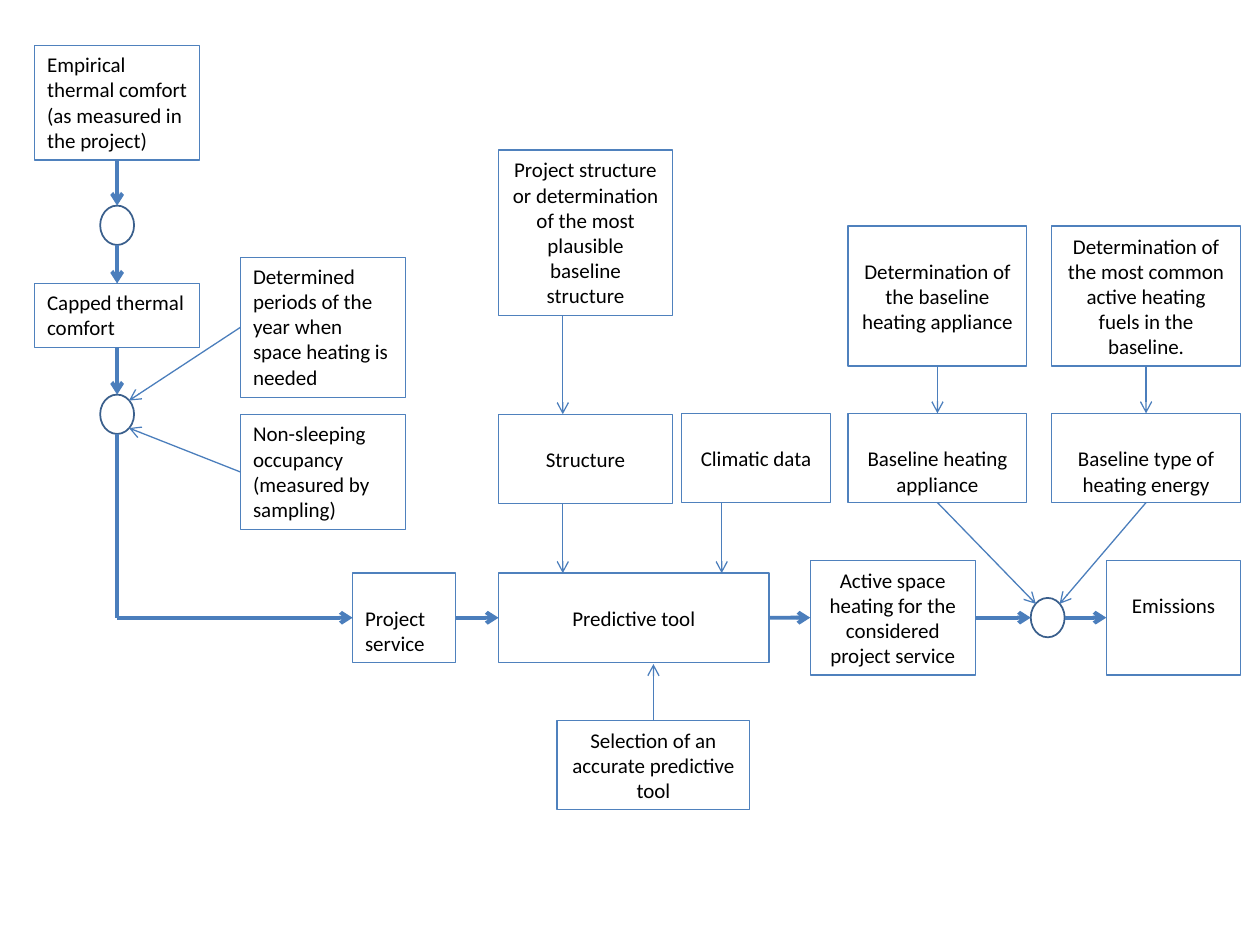
from pptx import Presentation
from pptx.enum import shapes, text
from pptx.dml.color import RGBColor
from pptx.oxml import ns
from pptx.util import Pt
from lxml import etree

COLORS = {"box": "4F81BD", "arrow": "4B7EBC", "node": "3A5F8C", "text": "000000"}
FONT, FONT_SIZE = "Calibri", 12
THIN, THICK = 0.75, 2.25
NODE_SIZE = (19.4, 22.5)

# Points on a shape, as fractions of its width and height
TOP, BOTTOM, LEFT, RIGHT = (0.5, 0), (0.5, 1), (0, 0.5), (1, 0.5)
TOP_LEFT, TOP_RIGHT, BOTTOM_RIGHT = (0.15, 0.15), (0.85, 0.15), (0.85, 0.85)

MIDDLE, BASE, UPPER = (text.MSO_ANCHOR.MIDDLE, text.MSO_ANCHOR.BOTTOM,
                       text.MSO_ANCHOR.TOP)


def color(name):
    return RGBColor.from_string(COLORS[name])


def add_outline(slide, kind, bounds, line_color, weight):
    shape = slide.shapes.add_shape(kind, *[Pt(value) for value in bounds])
    shape.shadow.inherit = False
    shape.fill.background()
    shape.line.color.rgb = color(line_color)
    shape.line.width = Pt(weight)
    return shape


def add_box(slide, bounds, label, anchor=MIDDLE, centered=True):
    shape = add_outline(slide, shapes.MSO_SHAPE.RECTANGLE, bounds, "box", THIN)
    frame = shape.text_frame
    frame.text = label
    frame.word_wrap = True
    frame.vertical_anchor = anchor
    paragraph = frame.paragraphs[0]
    paragraph.alignment = text.PP_ALIGN.CENTER if centered else text.PP_ALIGN.LEFT
    font = paragraph.runs[0].font
    font.name, font.size = FONT, Pt(FONT_SIZE)
    font.color.rgb = color("text")
    return shape


def add_node(slide, center_x, top):
    width, height = NODE_SIZE
    bounds = (center_x - width / 2, top, width, height)
    return add_outline(slide, shapes.MSO_SHAPE.OVAL, bounds, "node", 1)


def point(shape, place):
    """Position of a fractional place on a shape, in points."""
    return (shape.left.pt + place[0] * shape.width.pt,
            shape.top.pt + place[1] * shape.height.pt)


def add_line(slide, start, end, weight=THIN, head=True):
    connector = slide.shapes.add_connector(
        shapes.MSO_CONNECTOR.STRAIGHT, *[Pt(value) for value in (*start, *end)])
    connector.line.color.rgb = color("arrow")
    connector.line.width = Pt(weight)
    if head:
        etree.SubElement(connector.line._get_or_add_ln(), ns.qn("a:tailEnd"),
                         type="arrow")
    etree.SubElement(connector._element.spPr, ns.qn("a:effectLst"))


def join(slide, source, start, target, end, weight=THIN):
    add_line(slide, point(source, start), point(target, end), weight)


def drop(slide, upper, lower, x):
    """Vertical arrow between two stacked shapes."""
    add_line(slide, (x, point(upper, BOTTOM)[1]), (x, point(lower, TOP)[1]))


def comfort_region(slide, left, top, width, height):
    """Comfort chain, its two inputs and the line down to the service row."""
    box_width = 94.3
    axis = left + box_width / 2
    chain = [
        add_box(slide, (left, top, box_width, 65.5),
                "Empirical thermal comfort (as measured in the project)", UPPER, False),
        add_node(slide, axis, top + 91.5),
        add_box(slide, (left, top + 136, box_width, 36.5),
                "Capped thermal comfort", UPPER, False),
        add_node(slide, axis, top + 199.5),
    ]
    for source, target in zip(chain, chain[1:]):
        join(slide, source, BOTTOM, target, TOP, THICK)

    # Inputs to the second node
    input_left = left + width - box_width
    periods = add_box(slide, (input_left, top + 121, box_width, 80),
                      "Determined periods of the year when space heating is needed",
                      UPPER, False)
    occupancy = add_box(slide, (input_left, top + 211, box_width, 65.5),
                        "Non-sleeping occupancy (measured by sampling)", UPPER, False)
    join(slide, periods, LEFT, chain[-1], TOP_RIGHT)
    join(slide, occupancy, LEFT, chain[-1], BOTTOM_RIGHT)

    corner = (axis, top + height)
    add_line(slide, point(chain[-1], BOTTOM), corner, THICK, head=False)
    return corner


def predictive_region(slide, left, top, width, height):
    """Project service, the predictive tool and what feeds it."""
    box_height = 51
    tool_left, tool_top = left + 83.4, top + 241.8
    input_top = top + 151
    service = add_box(slide, (left, tool_top, 59, box_height),
                      "Project service", BASE, False)
    tool = add_box(slide, (tool_left, tool_top, 154.6, box_height), "Predictive tool")
    join(slide, service, RIGHT, tool, LEFT, THICK)

    # Structure and climate inputs from above
    plausible = add_box(
        slide, (tool_left, top, 99.4, 94.5),
        "Project structure or determination of the most plausible baseline structure")
    structure = add_box(slide, (tool_left, input_top, 99.4, box_height), "Structure")
    climate = add_box(slide, (left + width - 85, input_top - 0.5, 85, box_height),
                      "Climatic data")
    drop(slide, plausible, structure, tool_left + 36.7)
    drop(slide, structure, tool, tool_left + 36.7)
    drop(slide, climate, tool, tool_left + 127.5)

    # Tool selection from below
    selection = add_box(
        slide, (left + 116.8, top + height - box_height, 110.2, box_height),
        "Selection of an accurate predictive tool")
    start = point(selection, TOP)
    add_line(slide, start, (start[0], point(tool, BOTTOM)[1] + 1))
    return service, tool


def emissions_region(slide, left, top, width, height):
    """Baseline inputs over the heating-to-emissions row."""
    row_height = 65.5
    row_top = top + height - row_height
    heating = add_box(slide, (left, row_top, 94.3, row_height),
                      "Active space heating for the considered project service")
    node = add_node(slide, left + 135.7, row_top + (row_height - NODE_SIZE[1]) / 2)
    emissions = add_box(slide, (left + width - 76.8, row_top, 76.8, row_height),
                        "Emissions")
    emissions.text_frame.margin_bottom = Pt(18)
    join(slide, heating, RIGHT, node, LEFT, THICK)
    join(slide, node, RIGHT, emissions, LEFT, THICK)

    # Each baseline column: determination, result, width, left offset, node side
    columns = [
        ("Determination of the baseline heating appliance",
         "Baseline heating appliance", 102.2, 21.6, TOP_LEFT),
        ("Determination of the most common active heating fuels in the baseline.",
         "Baseline type of heating energy", 108.2, width - 108.2, TOP_RIGHT),
    ]
    for source_label, result_label, box_width, offset, side in columns:
        source = add_box(slide, (left + offset, top, box_width, 80), source_label)
        result = add_box(slide, (left + offset, top + 107, box_width, 51),
                         result_label, BASE)
        join(slide, source, BOTTOM, result, TOP)
        join(slide, result, BOTTOM, node, side)
    return heating


def main():
    presentation = Presentation()
    presentation.slide_width, presentation.slide_height = Pt(720), Pt(540)
    slide = presentation.slides.add_slide(presentation.slide_layouts[6])

    corner = comfort_region(slide, 19.8, 26, 212, 327)
    service, tool = predictive_region(slide, 201.5, 85.7, 273, 377)
    heating = emissions_region(slide, 463, 129.2, 246, 256.5)

    # Arrows between regions
    add_line(slide, corner, point(service, LEFT), THICK)
    join(slide, tool, RIGHT, heating, LEFT, THICK)

    presentation.save("out.pptx")


if __name__ == "__main__":
    main()
